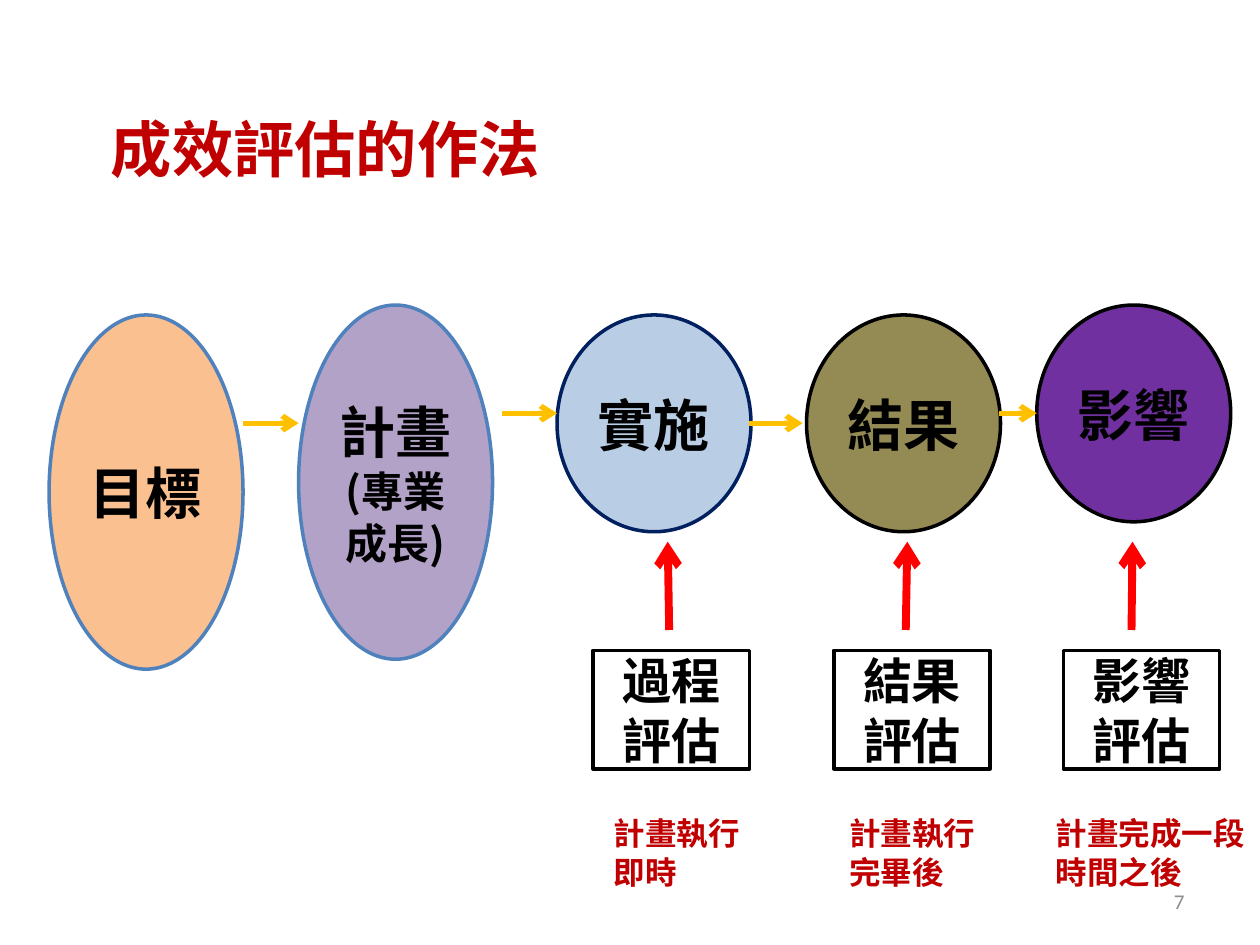
from lxml import etree
from pptx import Presentation
from pptx.dml.color import RGBColor
from pptx.enum.shapes import MSO_CONNECTOR, MSO_SHAPE
from pptx.enum.text import MSO_ANCHOR, PP_ALIGN
from pptx.oxml.ns import qn
from pptx.util import Cm, Pt

STRAIGHT = MSO_CONNECTOR.STRAIGHT
OVAL, RECTANGLE = MSO_SHAPE.OVAL, MSO_SHAPE.RECTANGLE
TOP, MIDDLE, BOTTOM = MSO_ANCHOR.TOP, MSO_ANCHOR.MIDDLE, MSO_ANCHOR.BOTTOM
LEFT, CENTER, RIGHT = PP_ALIGN.LEFT, PP_ALIGN.CENTER, PP_ALIGN.RIGHT

CJK_FONT, LATIN_FONT = "Noto Sans CJK SC", "Calibri"
LINE_HEIGHT = 1.22  # line pitch as a multiple of the text size

BLACK = RGBColor(0x00, 0x00, 0x00)
WHITE = RGBColor(0xFF, 0xFF, 0xFF)
GREY = RGBColor(0x8C, 0x8C, 0x8C)
DARK_RED = RGBColor(0xC0, 0x00, 0x00)
RED = RGBColor(0xFF, 0x00, 0x00)
GOLD = RGBColor(0xFF, 0xC0, 0x00)
BLUE = RGBColor(0x4F, 0x81, 0xBD)
NAVY = RGBColor(0x00, 0x20, 0x60)
ORANGE = RGBColor(0xFA, 0xC0, 0x90)
LILAC = RGBColor(0xB3, 0xA2, 0xC7)
PALE_BLUE = RGBColor(0xB9, 0xCD, 0xE5)
OLIVE = RGBColor(0x94, 0x8A, 0x54)
PURPLE = RGBColor(0x70, 0x30, 0xA0)

# Stages: left, top, height (cm), fill, outline, lines of (text, size)
STAGE_WIDTH = 3.91
STAGES = [
    (0.99, 6.35, 7.14, ORANGE, BLUE, [("目標", 32)]),
    (6.02, 6.15, 7.14, LILAC, BLUE, [("計畫", 32), ("(專業成長)", 24)]),
    (11.23, 6.35, 4.37, PALE_BLUE, NAVY, [("實施", 32)]),
    (16.26, 6.35, 4.37, OLIVE, BLACK, [("結果", 32)]),
    (20.9, 6.15, 4.37, PURPLE, BLACK, [("影響", 32)]),
]
# Arrows between stages: start x, end x, y (cm)
STAGE_ARROWS = [(4.9, 6.02, 8.53), (10.11, 11.23, 8.33),
                (15.09, 16.18, 8.53), (20.14, 20.9, 8.33)]
# Evaluations: box left, label, arrow start and end offsets,
# caption, caption offset, caption width (cm)
EVALUATION_TOP = 13.11
EVALUATIONS = [
    (11.96, "過程評估", 1.53, 1.5, "計畫執行即時", 0.16, 3.18),
    (16.81, "結果評估", 1.45, 1.48, "計畫執行完畢後", 0.06, 3.58),
    (21.44, "影響評估", 1.37, 1.39, "計畫完成一段時間之後", -0.41, 4.37),
]


def write_text(shape, lines, color=BLACK, font=CJK_FONT, bold=True,
               align=CENTER, anchor=MIDDLE):
    """Write (text, size) pairs, one paragraph each."""
    frame = shape.text_frame
    frame.word_wrap = True
    frame.vertical_anchor = anchor
    for index, (text, size) in enumerate(lines):
        paragraph = frame.paragraphs[0] if index == 0 else frame.add_paragraph()
        paragraph.alignment = align
        paragraph.line_spacing = Pt(size * LINE_HEIGHT)
        run = paragraph.add_run()
        run.text = text
        run.font.size = Pt(size)
        run.font.bold = bold
        run.font.color.rgb = color
        run.font.name = font
        east_asian = etree.SubElement(run.font._element, qn("a:ea"))
        east_asian.set("typeface", font)


def add_text_box(slide, left, top, width, height, lines, **text_format):
    box = slide.shapes.add_textbox(Cm(left), Cm(top), Cm(width), Cm(height))
    write_text(box, lines, **text_format)


def add_outlined_shape(slide, kind, left, top, width, height, fill, outline, lines):
    shape = slide.shapes.add_shape(kind, Cm(left), Cm(top), Cm(width), Cm(height))
    shape.shadow.inherit = False
    shape.fill.solid()
    shape.fill.fore_color.rgb = fill
    shape.line.color.rgb = outline
    shape.line.width = Pt(2)
    frame = shape.text_frame
    frame.margin_left = frame.margin_right = Cm(0.1)
    write_text(shape, lines)


def add_arrow(slide, start_x, start_y, end_x, end_y, color, width):
    arrow = slide.shapes.add_connector(
        STRAIGHT, Cm(start_x), Cm(start_y), Cm(end_x), Cm(end_y))
    arrow.line.color.rgb = color
    arrow.line.width = Pt(width)
    head = etree.SubElement(arrow.line._get_or_add_ln(), qn("a:tailEnd"))
    head.set("type", "arrow")
    etree.SubElement(arrow._element.spPr, qn("a:effectLst"))


def format_title(slide, left, top, width, height):
    title = slide.shapes.title
    title.left, title.top = Cm(left), Cm(top)
    title.width, title.height = Cm(width), Cm(height)
    title.text_frame.margin_bottom = Cm(1.48)
    write_text(title, [("成效評估的作法", 35)], color=DARK_RED,
               align=LEFT, anchor=BOTTOM)


def draw_stages(slide):
    for left, top, height, fill, outline, lines in STAGES:
        add_outlined_shape(slide, OVAL, left, top, STAGE_WIDTH, height,
                           fill, outline, lines)
    for start_x, end_x, y in STAGE_ARROWS:
        add_arrow(slide, start_x, y, end_x, y, GOLD, 3)


def draw_evaluation(slide, left, top, label, arrow_start, arrow_end,
                    caption, caption_offset, caption_width):
    """Draw a labelled box with an arrow above it and a caption below."""
    add_arrow(slide, left + arrow_start, top - 0.41,
              left + arrow_end, top - 2.19, RED, 4.5)
    add_outlined_shape(slide, RECTANGLE, left, top, 3.15, 2.39,
                       WHITE, BLACK, [(label, 28)])
    add_text_box(slide, left + caption_offset, top + 3.17, caption_width, 1.8,
                 [(caption, 18)], color=DARK_RED, align=LEFT, anchor=TOP)


def main():
    presentation = Presentation()
    presentation.slide_width, presentation.slide_height = Cm(25.4), Cm(19.05)
    title_only = presentation.slide_layouts[5]
    slide = presentation.slides.add_slide(title_only)

    format_title(slide, 1.98, 1.57, 19.46, 3.63)
    draw_stages(slide)
    for left, *details in EVALUATIONS:
        draw_evaluation(slide, left, EVALUATION_TOP, *details)

    # Slide number
    add_text_box(slide, 18.21, 17.65, 5.92, 1.02, [("7", 12)], color=GREY,
                 font=LATIN_FONT, bold=False, align=RIGHT)
    presentation.save("out.pptx")


if __name__ == "__main__":
    main()
